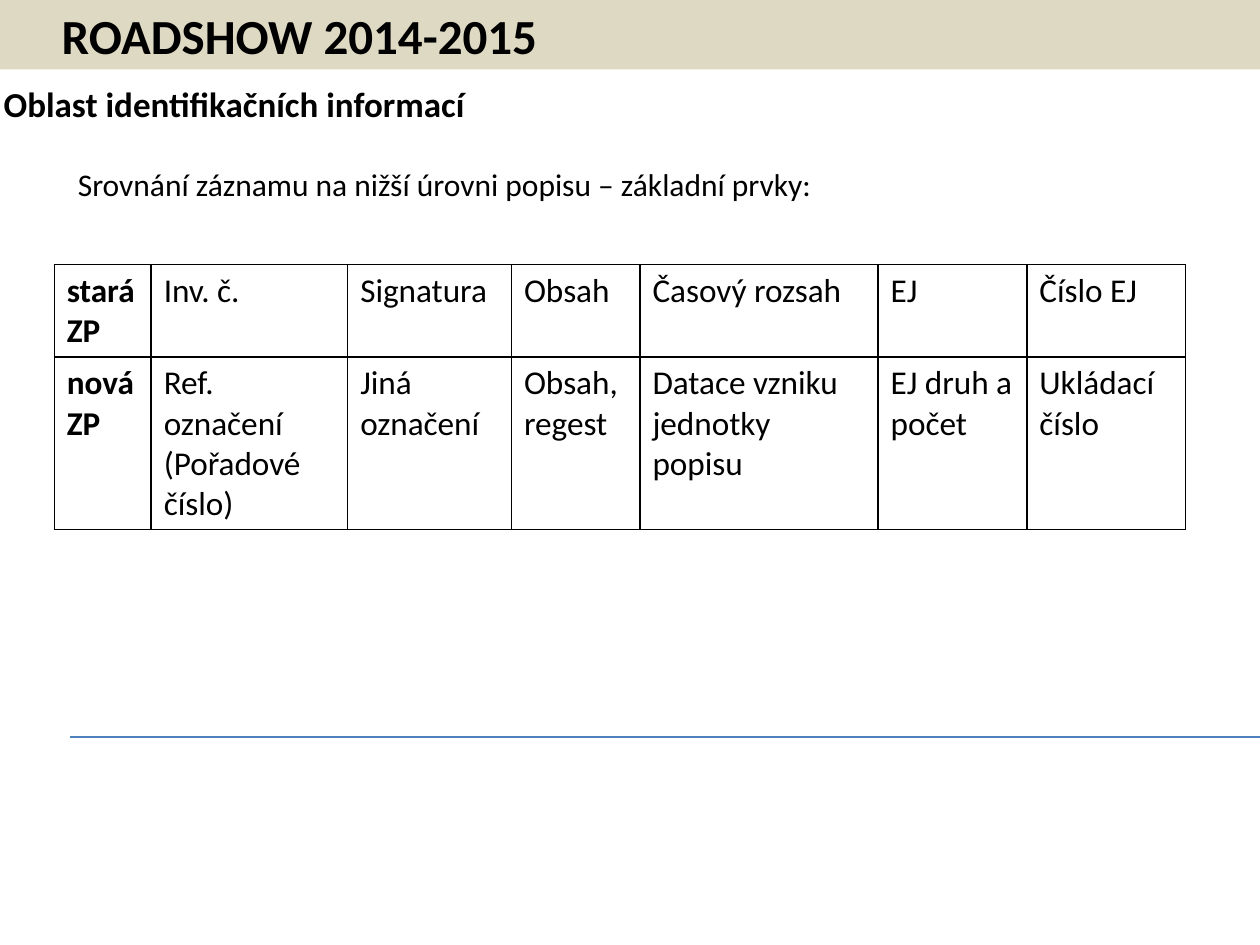
from lxml.etree import SubElement
from pptx import Presentation
from pptx.dml.color import RGBColor
from pptx.enum.shapes import MSO_CONNECTOR as Connector, MSO_SHAPE as Shape
from pptx.enum.text import MSO_ANCHOR as Anchor, PP_ALIGN as Align
from pptx.oxml import parse_xml
from pptx.oxml.ns import nsdecls, qn
from pptx.util import Pt

FONT = "Calibri"
BLACK = "000000"
COLUMN_WIDTHS = [55.4, 112.3, 93.6, 73.4, 136.1, 85, 90.7]
ROW_HEIGHTS = [52.6, 98.6]
ROWS = [
    ["stará ZP", "Inv. č.", "Signatura", "Obsah", "Časový rozsah", "EJ", "Číslo EJ"],
    ["nová ZP", "Ref. označení (Pořadové číslo)", "Jiná označení", "Obsah, regest",
     "Datace vzniku jednotky popisu", "EJ druh a počet", "Ukládací číslo"],
]


def color(value):
    return RGBColor.from_string(value)


def write(frame, text, size, bold=False):
    frame.word_wrap = True
    para = frame.paragraphs[0]
    para.text = text
    para.alignment = Align.LEFT
    font = para.font
    font.name, font.size, font.bold = FONT, Pt(size), bold
    font.color.rgb = color(BLACK)


def add_text(page, left, top, width, height, text, size, bold=False, anchor=Anchor.TOP):
    box = page.shapes.add_textbox(Pt(left), Pt(top), Pt(width), Pt(height))
    box.text_frame.vertical_anchor = anchor
    write(box.text_frame, text, size, bold)


def add_banner(page, width, height, fill, text):
    banner = page.shapes.add_shape(Shape.RECTANGLE, 0, 0, Pt(width), Pt(height))
    banner.shadow.inherit = False
    banner.fill.solid()
    banner.fill.fore_color.rgb = color(fill)
    banner.line.fill.background()
    frame = banner.text_frame
    frame.margin_left = Pt(35.3)
    frame.vertical_anchor = Anchor.MIDDLE
    write(frame, text, 28, True)


def add_rule(page, left, right, y, line_color):
    rule = page.shapes.add_connector(Connector.STRAIGHT, Pt(left), Pt(y), Pt(right), Pt(y))
    rule.line.color.rgb = color(line_color)
    rule.line.width = Pt(0.75)
    SubElement(rule._element.spPr, qn("a:effectLst"))


def set_borders(cell, line_color, width):
    properties = cell._tc.get_or_add_tcPr()
    for index, side in enumerate(("lnL", "lnR", "lnT", "lnB")):
        border = parse_xml(
            f'<a:{side} {nsdecls("a")} w="{Pt(width)}"><a:solidFill>'
            f'<a:srgbClr val="{line_color}"/></a:solidFill></a:{side}>')
        properties.insert(index, border)


def add_grid(page, left, top):
    frame = page.shapes.add_table(
        len(ROWS), len(COLUMN_WIDTHS), Pt(left), Pt(top),
        Pt(sum(COLUMN_WIDTHS)), Pt(sum(ROW_HEIGHTS)))
    table = frame.table
    table.first_row = table.horz_banding = False
    for column, width in zip(table.columns, COLUMN_WIDTHS):
        column.width = Pt(width)
    for row, height, texts in zip(table.rows, ROW_HEIGHTS, ROWS):
        row.height = Pt(height)
        for index, (cell, text) in enumerate(zip(row.cells, texts)):
            cell.fill.background()
            set_borders(cell, BLACK, 1)
            write(cell.text_frame, text, 19, index == 0)


def main():
    deck = Presentation()
    deck.slide_width, deck.slide_height = Pt(720), Pt(540)
    page = deck.slides.add_slide(deck.slide_layouts[6])
    add_rule(page, 40.3, 720, 421.2, "4F81BD")
    add_text(page, -5, 43.2, 720, 31.7, "Oblast identifikačních informací", 20, True, Anchor.BOTTOM)
    add_grid(page, 31, 151.2)
    add_text(page, 37.4, 90.7, 635, 28.8,
             "Srovnání záznamu na nižší úrovni popisu – základní prvky:", 18)
    add_banner(page, 720, 39.6, "DDD9C3", "ROADSHOW 2014-2015")
    deck.save("out.pptx")


if __name__ == "__main__":
    main()
